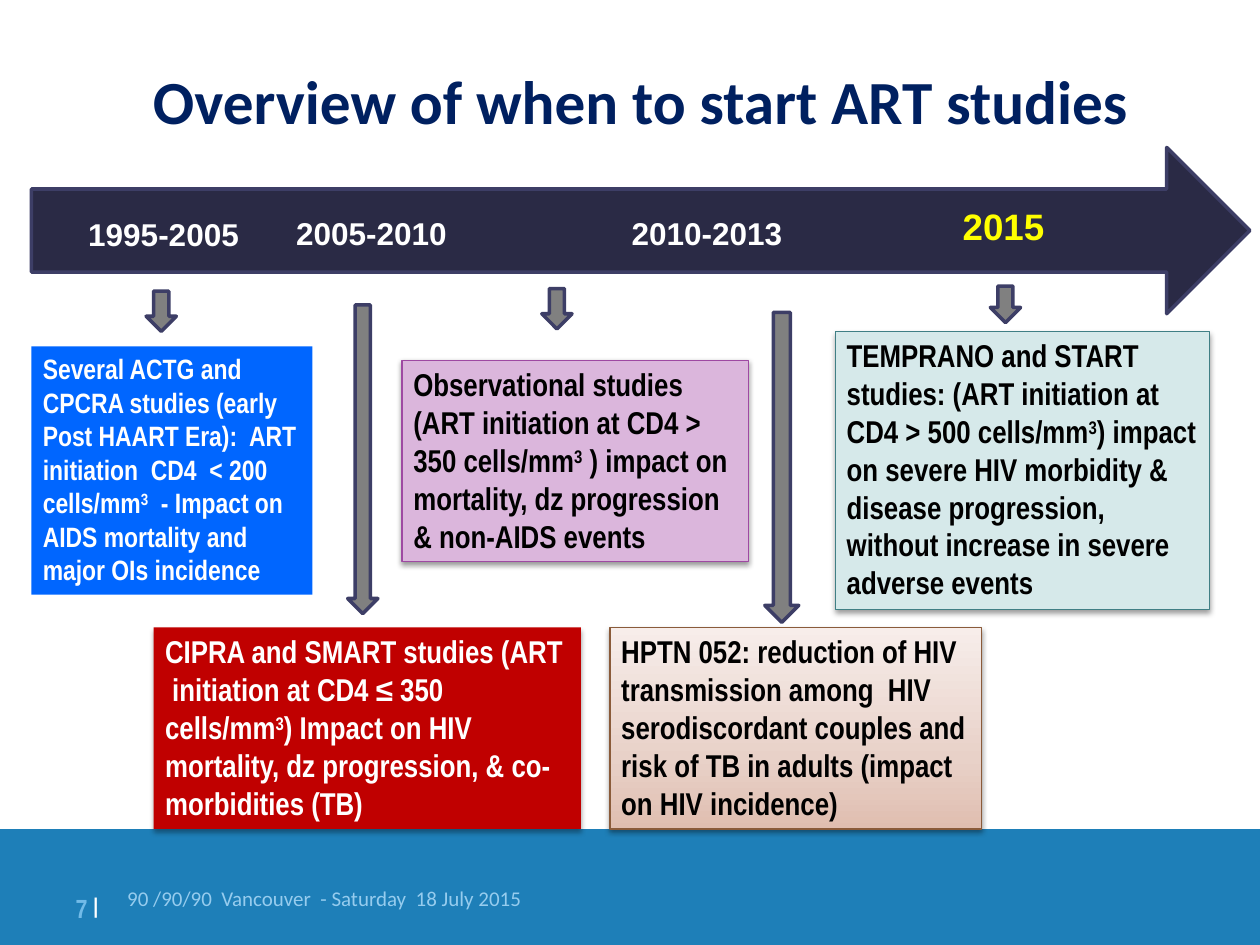
from dataclasses import dataclass

from lxml.etree import SubElement
from pptx import Presentation
from pptx.dml.color import RGBColor
from pptx.enum.shapes import MSO_SHAPE
from pptx.enum.text import MSO_ANCHOR, MSO_AUTO_SIZE, PP_ALIGN
from pptx.oxml.ns import qn
from pptx.util import Inches, Pt


@dataclass(frozen=True)
class Theme:
    """Colours, fonts and type sizes of the slide."""
    navy: str = "002060"
    timeline: str = "2A2A45"
    outline: str = "3D3E66"
    marker: str = "808080"
    band: str = "1E7FB8"
    pale_blue: str = "96CCEE"
    number_blue: str = "72BBE8"
    white: str = "FFFFFF"
    black: str = "000000"
    yellow: str = "FFFF00"
    blue: str = "0066FF"
    red: str = "C00000"
    violet: str = "DBB6DC"
    violet_line: str = "9E49A2"
    teal: str = "D6E9EA"
    teal_line: str = "407F85"
    brown_line: str = "8A5B3A"
    sand: tuple = ((0, "E0BEB0"), (35, "E8D1C8"), (100, "F7EDEA"))
    heading: str = "Calibri"
    body: str = "Arial Narrow"
    label: str = "Arial"
    title_size: int = 35
    study_size: int = 18
    small_study_size: int = 16
    highlight_size: int = 21
    footer_size: int = 12
    number_size: int = 15


THEME = Theme()


def add_shadow(effects, color, opacity, blur, distance, angle=90):
    """Put an outer shadow into an effect list."""
    shadow = SubElement(effects, qn("a:outerShdw"), blurRad=str(Pt(blur)),
                        dist=str(Pt(distance)), dir=str(angle * 60000), rotWithShape="0")
    tint = SubElement(shadow, qn("a:srgbClr"), val=color)
    SubElement(tint, qn("a:alpha"), val=str(opacity * 1000))


def fill_gradient(shape, stops):
    """Fill a shape with colour stops that run from bottom to top."""
    shape.fill.gradient()
    shape.fill.gradient_angle = 90
    stop_list = shape._element.spPr.find(qn("a:gradFill")).find(qn("a:gsLst"))
    for stop in list(stop_list):
        stop_list.remove(stop)
    for position, color in stops:
        stop = SubElement(stop_list, qn("a:gs"), pos=str(position * 1000))
        SubElement(stop, qn("a:srgbClr"), val=color)


def add_block(slide, kind, place, fill, line=None, width=2, shadow=None):
    """Add a preset shape with its fill, outline and shadow."""
    shape = slide.shapes.add_shape(kind, *map(Inches, place))
    shape.shadow.inherit = False
    if isinstance(fill, tuple):
        fill_gradient(shape, fill)
    else:
        shape.fill.solid()
        shape.fill.fore_color.rgb = RGBColor.from_string(fill)
    if line:
        shape.line.color.rgb = RGBColor.from_string(line)
        shape.line.width = Pt(width)
    else:
        shape.line.fill.background()
    if shadow:
        add_shadow(shape._element.spPr.find(qn("a:effectLst")), *shadow)
    return shape


def add_run(paragraph, text, *, size, font, color, bold=True, baseline=0):
    """Add a formatted run to a paragraph."""
    run = paragraph.add_run()
    run.text = text
    run.font.size = Pt(size)
    run.font.name = font
    run.font.bold = bold
    run.font.color.rgb = RGBColor.from_string(color)
    if baseline:
        run._r.get_or_add_rPr().set("baseline", str(baseline * 1000))
    return run


def write_text(shape, text, *, align=PP_ALIGN.LEFT, anchor=MSO_ANCHOR.TOP,
               inset=(0.09, 0.04), grow=False, **format):
    """Write text in a shape, raising every second part between carets."""
    frame = shape.text_frame
    frame.word_wrap = True
    frame.auto_size = MSO_AUTO_SIZE.SHAPE_TO_FIT_TEXT if grow else MSO_AUTO_SIZE.NONE
    frame.vertical_anchor = anchor
    frame.margin_left = frame.margin_right = Inches(inset[0])
    frame.margin_top = frame.margin_bottom = Inches(inset[1])
    paragraph = frame.paragraphs[0]
    paragraph.alignment = align
    for index, part in enumerate(text.split("^")):
        add_run(paragraph, part, baseline=30 * (index % 2), **format)
    return paragraph


def add_label(slide, place, text, **format):
    """Add a text box and return its paragraph."""
    return write_text(slide.shapes.add_textbox(*map(Inches, place)), text, **format)


def add_study(slide, place, text, *, fill, color, size=THEME.study_size, line=None, shadow=None):
    """Add a box that describes a group of studies."""
    box = add_block(slide, MSO_SHAPE.RECTANGLE, place, fill, line, 0.75, shadow)
    write_text(box, text, grow=True, size=size, font=THEME.body, color=color)


def add_footer(slide):
    """Add the bottom band with the event and the slide number."""
    add_block(slide, MSO_SHAPE.RECTANGLE, (0, 6.58, 10, 0.92), THEME.band)
    add_label(slide, (1.01, 7.03, 4.65, 0.47), "90 /90/90  Vancouver  - Saturday  18 July 2015",
              inset=(0, 0), size=THEME.footer_size, font=THEME.heading,
              color=THEME.pale_blue, bold=False)
    number = add_label(slide, (0.39, 7, 0.39, 0.36), "7 ", align=PP_ALIGN.RIGHT, inset=(0, 0),
                       size=THEME.number_size, font=THEME.body, color=THEME.number_blue)
    add_run(number, "|", size=THEME.highlight_size, font=THEME.body,
            color=THEME.white, baseline=14)


def add_title(slide, text):
    """Add the centred title with a pale text shadow."""
    paragraph = add_label(slide, (0.58, 0.33, 9.01, 0.92), text, align=PP_ALIGN.CENTER,
                          anchor=MSO_ANCHOR.MIDDLE, inset=(0, 0), size=THEME.title_size,
                          font=THEME.heading, color=THEME.navy)
    properties = paragraph.runs[0]._r.get_or_add_rPr()
    effects = SubElement(properties, qn("a:effectLst"))
    properties.find(qn("a:latin")).addprevious(effects)
    add_shadow(effects, THEME.pale_blue, 100, 0, 2, 45)


def add_timeline(slide):
    """Add the wide arrow, its periods and the markers below it."""
    for left, top, width, text, align in (
        (0.61, 1.67, 1.69, "1995-2005", PP_ALIGN.LEFT),
        (2.26, 1.66, 2.17, "2005-2010", PP_ALIGN.LEFT),
        (4.67, 1.66, 1.88, "2010-2013", PP_ALIGN.CENTER),
    ):
        add_label(slide, (left, top, width, 0.39), text, align=align, grow=True,
                  size=THEME.study_size, font=THEME.label, color=THEME.white)
    add_label(slide, (7.55, 1.58, 0.93, 0.46), "2015", grow=True,
              size=THEME.highlight_size, font=THEME.label, color=THEME.yellow)
    for place in ((1.16, 2.31, 0.24, 0.32), (4.3, 2.29, 0.24, 0.32), (7.86, 2.27, 0.24, 0.29),
                  (2.76, 2.42, 0.24, 2.45), (6.07, 2.48, 0.27, 2.46)):
        add_block(slide, MSO_SHAPE.DOWN_ARROW, place, THEME.marker, THEME.outline)


def add_studies(slide):
    """Add the five study boxes."""
    soft = (THEME.black, 38, 3.1, 1.6)
    add_study(slide, (0.25, 2.75, 2.23, 1.97),
              "Several ACTG and CPCRA studies (early Post HAART Era):  ART initiation  CD4  < 200 "
              "cells/mm^3^  - Impact on AIDS mortality and major OIs incidence",
              fill=THEME.blue, color=THEME.white, size=THEME.small_study_size)
    add_study(slide, (1.22, 4.98, 3.39, 1.6),
              "CIPRA and SMART studies (ART  initiation at CD4 ≤ 350 cells/mm^3^) Impact on HIV "
              "mortality, dz progression, & co-morbidities (TB)",
              fill=THEME.red, color=THEME.white, shadow=(THEME.black, 35, 3.1, 1.8))
    add_study(slide, (3.19, 2.86, 2.75, 1.6),
              "Observational studies (ART initiation at CD4 > 350 cells/mm^3^ ) impact on "
              "mortality, dz progression & non-AIDS events",
              fill=THEME.violet, color=THEME.black, line=THEME.violet_line, shadow=soft)
    add_study(slide, (4.84, 4.98, 2.95, 1.6),
              "HPTN 052: reduction of HIV transmission among  HIV serodiscordant couples and "
              "risk of TB in adults (impact on HIV incidence)",
              fill=THEME.sand, color=THEME.black, line=THEME.brown_line, shadow=soft)
    add_study(slide, (6.63, 2.63, 2.97, 2.21),
              "TEMPRANO and START studies: (ART initiation at CD4 > 500 cells/mm^3^) impact on "
              "severe HIV morbidity & disease progression, without increase in severe adverse events",
              fill=THEME.teal, color=THEME.black, line=THEME.teal_line, shadow=soft)


def main():
    """Build the slide and save it."""
    presentation = Presentation()
    presentation.slide_width, presentation.slide_height = Inches(10), Inches(7.5)
    slide = presentation.slides.add_slide(presentation.slide_layouts[6])
    add_footer(slide)
    add_title(slide, "Overview of when to start ART studies")
    add_block(slide, MSO_SHAPE.RIGHT_ARROW, (0.25, 1.17, 9.67, 1.32),
              THEME.timeline, THEME.outline)
    add_studies(slide)
    add_timeline(slide)
    presentation.save("out.pptx")


if __name__ == "__main__":
    main()
